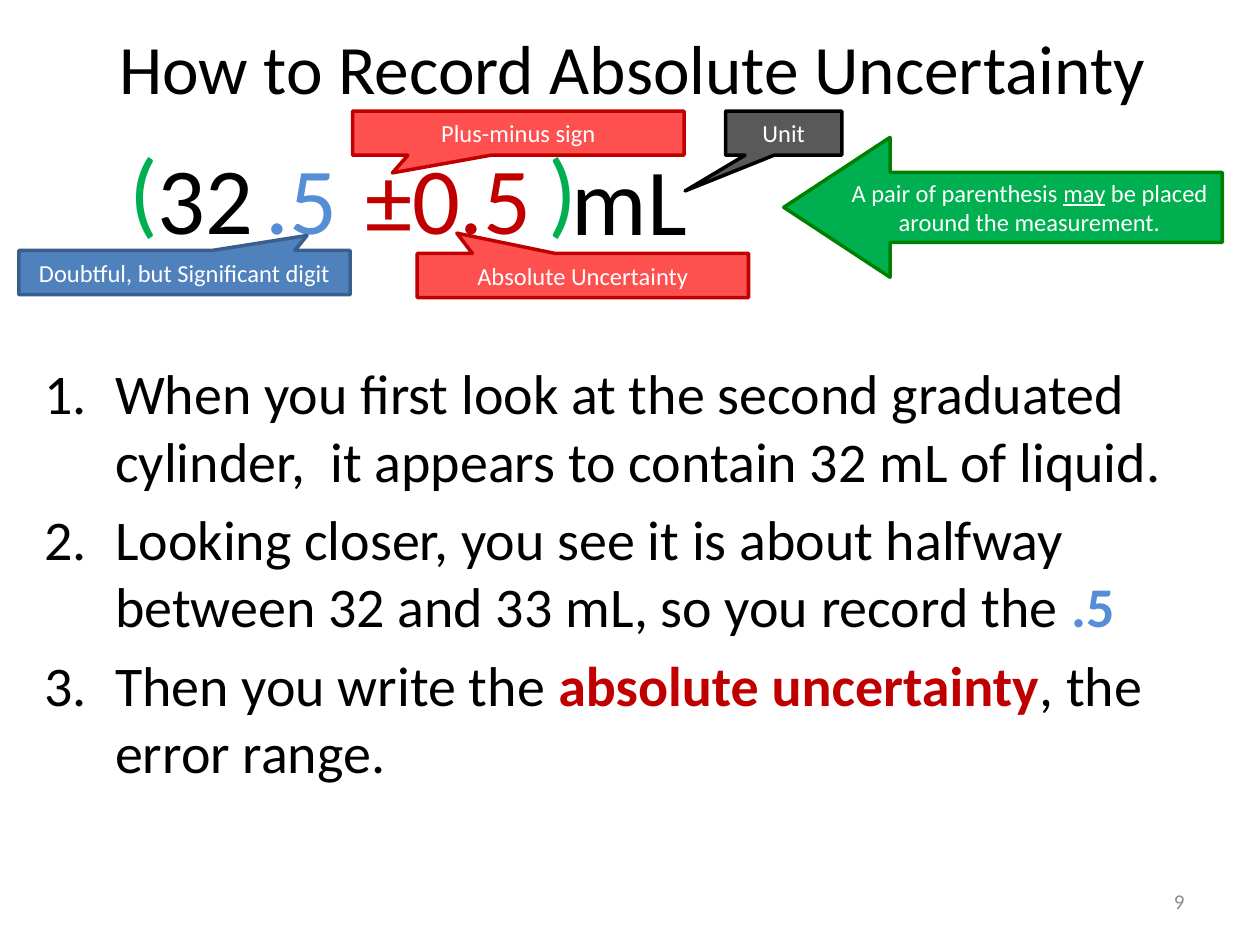
from dataclasses import dataclass

import pptx
import pptx.dml.color
import pptx.enum.shapes
import pptx.enum.text
import pptx.util
from lxml import etree

Cm = pptx.util.Cm
Pt = pptx.util.Pt
Shape = pptx.enum.shapes.MSO_SHAPE
Align = pptx.enum.text.PP_ALIGN
Anchor = pptx.enum.text.MSO_ANCHOR
AutoSize = pptx.enum.text.MSO_AUTO_SIZE


@dataclass(frozen=True)
class Theme:
    font: str = "Calibri"
    black: str = "000000"
    white: str = "FFFFFF"
    digit: str = "558ED5"
    error: str = "C00000"
    bracket: str = "00B050"
    bracket_edge: str = "008000"
    blue: str = "4F81BD"
    blue_edge: str = "3A5F8C"
    red: str = "FF5050"
    grey: str = "595959"
    number: str = "8C8C8C"
    title_size: float = 39.6
    reading_size: int = 54
    body_size: int = 32
    label_size: int = 14
    number_size: int = 12
    edge_width: int = 2


def rgb(value):
    return pptx.dml.color.RGBColor.from_string(value)


def apply(target, values):
    for name, value in values.items():
        setattr(target, name, value)


class SlideBuilder:
    def __init__(self, theme, slide):
        self.theme = theme
        self.slide = slide

    def add_runs(self, paragraph, runs, size, color, alignment=Align.LEFT):
        paragraph.alignment = alignment
        for text, changes in runs:
            values = {"name": self.theme.font, "size": Pt(size), "color": color} | changes
            run = paragraph.add_run()
            run.text = text
            run.font.color.rgb = rgb(values.pop("color"))
            apply(run.font, values)

    def title(self, text, left, top, width, height):
        shape = self.slide.shapes.title
        apply(shape, {"left": Cm(left), "top": Cm(top), "width": Cm(width), "height": Cm(height)})
        apply(shape.text_frame, {"auto_size": AutoSize.NONE, "vertical_anchor": Anchor.MIDDLE})
        self.add_runs(shape.text_frame.paragraphs[0], [(text, {})],
                      self.theme.title_size, self.theme.black, Align.CENTER)

    def text_box(self, left, top, width, height, **frame_values):
        shape = self.slide.shapes.add_textbox(Cm(left), Cm(top), Cm(width), Cm(height))
        apply(shape.text_frame, frame_values)
        return shape.text_frame

    def reading(self, text, color, left, top, width):
        frame = self.text_box(left, top, width, 2.57, word_wrap=False,
                              auto_size=AutoSize.SHAPE_TO_FIT_TEXT)
        self.add_runs(frame.paragraphs[0], [(text, {})], self.theme.reading_size, color)

    def numbered_list(self, items, left, top, width, height):
        frame = self.text_box(left, top, width, height, word_wrap=True)
        for index, runs in enumerate(items):
            paragraph = frame.add_paragraph() if index else frame.paragraphs[0]
            paragraph.space_before = Pt(self.theme.body_size * 0.2)
            self.add_runs(paragraph, runs, self.theme.body_size, self.theme.black)
            properties = paragraph._p.get_or_add_pPr()
            indent = Cm(1.43)
            properties.set("marL", str(indent))
            properties.set("indent", str(-indent))
            etree.SubElement(properties, pptx.oxml.ns.qn("a:buFont"), typeface="+mj-lt")
            etree.SubElement(properties, pptx.oxml.ns.qn("a:buAutoNum"), type="arabicPeriod")

    def label(self, kind, runs, fill, edge, adjustments, left, top, width=6.68, height=0.89):
        shape = self.slide.shapes.add_shape(kind, Cm(left), Cm(top), Cm(width), Cm(height))
        shape.shadow.inherit = False
        for index, value in enumerate(adjustments):
            shape.adjustments[index] = value
        shape.fill.solid()
        shape.fill.fore_color.rgb = rgb(fill)
        shape.line.color.rgb = rgb(edge)
        shape.line.width = Pt(self.theme.edge_width)
        apply(shape.text_frame, {"word_wrap": True, "vertical_anchor": Anchor.MIDDLE})
        self.add_runs(shape.text_frame.paragraphs[0], runs,
                      self.theme.label_size, self.theme.white, Align.CENTER)

    def callout(self, text, fill, edge, tip, *place):
        self.label(Shape.RECTANGULAR_CALLOUT, [(text, {})], fill, edge, tip, *place)

    def slide_number(self, text, left, top, width, height):
        frame = self.text_box(left, top, width, height, word_wrap=True,
                              vertical_anchor=Anchor.MIDDLE)
        self.add_runs(frame.paragraphs[0], [(text, {})],
                      self.theme.number_size, self.theme.number, Align.RIGHT)


def main():
    theme = Theme()
    presentation = pptx.Presentation()
    presentation.slide_width = Cm(25.4)
    presentation.slide_height = Cm(19.05)
    slide = presentation.slides.add_slide(presentation.slide_layouts[5])
    builder = SlideBuilder(theme, slide)

    builder.title("How to Record Absolute Uncertainty", 1.32, 0, 22.86, 2.69)
    builder.numbered_list([
        [("When you first look at the second graduated cylinder,  it appears to contain "
          "32 mL of liquid.", {})],
        [("Looking closer, you see it is about halfway between 32 and 33 mL, "
          "so you record the ", {}),
         (".5", {"color": theme.digit, "bold": True})],
        [("Then you write the ", {}),
         ("absolute uncertainty", {"color": theme.error, "bold": True}),
         (", the error range.", {})],
    ], 0.64, 7.11, 24.77, 12.27)

    for part in [
        ("32", theme.black, 2.92, 2.69, 2.46),
        (".5", theme.digit, 5.11, 2.69, 1.98),
        ("±0.5", theme.error, 7.11, 2.69, 3.91),
        ("mL", theme.black, 11.28, 2.72, 2.87),
    ]:
        builder.reading(*part)

    for callout in [
        ("Doubtful, but Significant digit", theme.blue, theme.blue_edge,
         (0.37, -0.84), 0.38, 5.05),
        ("Absolute Uncertainty", theme.red, theme.error, (-0.38, -0.96), 8.41, 5.11),
        ("Plus-minus sign", theme.red, theme.error, (-0.38, 0.9), 7.11, 2.24),
        ("Unit", theme.grey, theme.black, (-0.85, 1.31), 14.63, 2.24, 2.34),
    ]:
        builder.callout(*callout)

    for bracket, left in (("(", 2.36), (")", 10.8)):
        builder.reading(bracket, theme.bracket, left, 2.54, 1.09)

    builder.label(Shape.LEFT_ARROW, [
        ("A pair of parenthesis ", {}),
        ("may", {"underline": True}),
        (" be placed around the measurement.", {}),
    ], theme.bracket, theme.bracket_edge, (0.5, 0.76), 15.8, 2.77, 8.84, 2.82)
    builder.slide_number("9", 18.21, 17.65, 5.92, 1.02)

    presentation.save("out.pptx")


if __name__ == "__main__":
    main()
